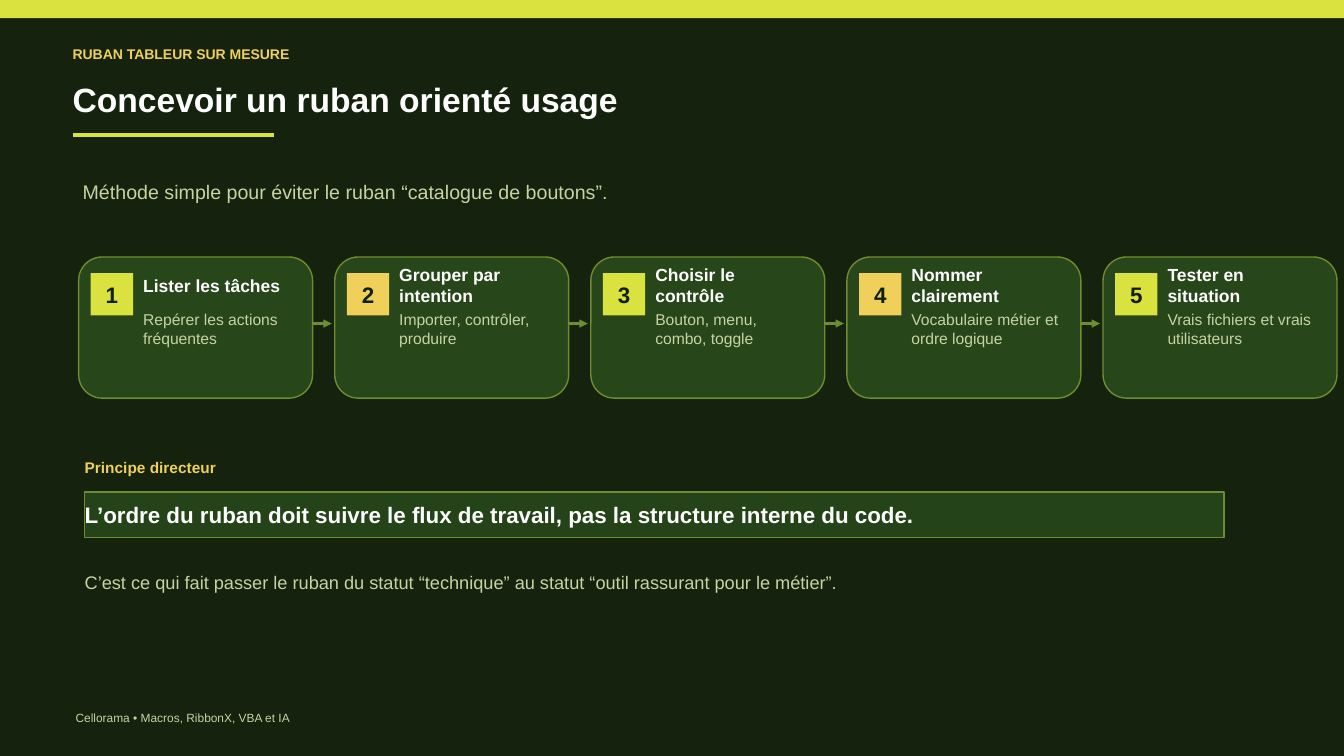
from dataclasses import dataclass

from lxml import etree
from pptx import Presentation
from pptx import util as u
from pptx.dml.color import RGBColor
from pptx.enum import shapes, text
from pptx.oxml import ns

PX = 9144
FONT = "Arial"
NIGHT = RGBColor(0x15, 0x22, 0x0D)
LIME = RGBColor(0xD9, 0xE2, 0x3F)
GOLD = RGBColor(0xF0, 0xD0, 0x5B)
WHITE = RGBColor(0xFF, 0xFF, 0xFF)
SAGE = RGBColor(0xC7, 0xD3, 0xA3)
OLIVE = RGBColor(0x6E, 0x8D, 0x2F)
FOREST = RGBColor(0x27, 0x46, 0x1A)
INK = RGBColor(0x10, 0x20, 0x0E)

CARD_LEFT, CARD_TOP, CARD_WIDTH, CARD_HEIGHT = 78, 255, 232, 140
CARD_PITCH = 254
ARROW_Y, ARROW_LENGTH = 321, 19


@dataclass(frozen=True)
class Area:
    left: int
    top: int
    width: int
    height: int

    def emu(self) -> list[int]:
        return [v * PX for v in (self.left, self.top, self.width, self.height)]


@dataclass(frozen=True)
class Style:
    size: float
    color: RGBColor
    bold: bool = False
    align: text.PP_ALIGN = text.PP_ALIGN.LEFT


@dataclass(frozen=True)
class Label:
    words: str
    area: Area
    style: Style


@dataclass(frozen=True)
class Step:
    heading: str
    detail: str


BADGE = Style(16, INK, True, text.PP_ALIGN.CENTER)
HEADING = Style(12.5, WHITE, True)
DETAIL = Style(11.2, SAGE)

TITLE = Label("Concevoir un ruban orienté usage", Area(72, 72, 1160, 52), Style(24, WHITE, True))
PRINCIPLE = Label(
    "L’ordre du ruban doit suivre le flux de travail, pas la structure interne du code.",
    Area(84, 488, 1130, 45), Style(16, WHITE, True))
LABELS = [
    Label("RUBAN TABLEUR SUR MESURE", Area(72, 42, 550, 22), Style(10, GOLD, True)),
    Label("Méthode simple pour éviter le ruban “catalogue de boutons”.",
          Area(82, 176, 600, 28), Style(14, SAGE)),
    Label("Principe directeur", Area(84, 452, 200, 24), Style(11, GOLD, True)),
    Label("C’est ce qui fait passer le ruban du statut “technique” au statut "
          "“outil rassurant pour le métier”.", Area(84, 560, 1100, 36), Style(13, SAGE)),
    Label("Cellorama • Macros, RibbonX, VBA et IA", Area(75, 703, 520, 18), Style(8.5, SAGE)),
]
STEPS = [
    Step("Lister les tâches", "Repérer les actions fréquentes"),
    Step("Grouper par intention", "Importer, contrôler, produire"),
    Step("Choisir le contrôle", "Bouton, menu, combo, toggle"),
    Step("Nommer clairement", "Vocabulaire métier et ordre logique"),
    Step("Tester en situation", "Vrais fichiers et vrais utilisateurs"),
]


def write(box, words: str, style: Style) -> None:
    frame = box.text_frame
    frame.word_wrap = True
    frame.auto_size = text.MSO_AUTO_SIZE.NONE
    frame.vertical_anchor = text.MSO_ANCHOR.MIDDLE
    frame.margin_left = frame.margin_top = frame.margin_right = frame.margin_bottom = 0
    para = frame.paragraphs[0]
    para.alignment = style.align
    span = para.add_run()
    span.text = words
    span.font.name = FONT
    span.font.size = u.Pt(style.size)
    span.font.bold = style.bold
    span.font.color.rgb = style.color


def add_label(page, label: Label) -> None:
    write(page.shapes.add_textbox(*label.area.emu()), label.words, label.style)


def add_title(page, label: Label) -> None:
    box = page.shapes.title
    box.left, box.top, box.width, box.height = label.area.emu()
    write(box, label.words, label.style)


def add_block(page, area: Area, fill: RGBColor, outline: RGBColor | None = None,
              kind=shapes.MSO_SHAPE.RECTANGLE):
    block = page.shapes.add_shape(kind, *area.emu())
    block.shadow.inherit = False
    block.fill.solid()
    block.fill.fore_color.rgb = fill
    if outline is None:
        block.line.fill.background()
    else:
        block.line.color.rgb = outline
        block.line.width = u.Pt(1)
    return block


def add_line(page, left: int, y: int, length: int, color: RGBColor, weight: float,
             arrow: bool = False) -> None:
    line = page.shapes.add_connector(
        shapes.MSO_CONNECTOR.STRAIGHT, left * PX, y * PX, (left + length) * PX, y * PX)
    line.line.color.rgb = color
    line.line.width = u.Pt(weight)
    if arrow:
        etree.SubElement(line.line._get_or_add_ln(), ns.qn("a:tailEnd"), type="triangle")
    etree.SubElement(line._element.spPr, ns.qn("a:effectLst"))


def add_step(page, index: int, step: Step) -> None:
    left = CARD_LEFT + index * CARD_PITCH
    badge = add_block(page, Area(left + 12, CARD_TOP + 16, 42, 42), GOLD if index % 2 else LIME)
    write(badge, str(index + 1), BADGE)
    add_label(page, Label(step.heading, Area(left + 64, CARD_TOP + 14, 150, 28), HEADING))
    add_label(page, Label(step.detail, Area(left + 64, CARD_TOP + 50, 150, 42), DETAIL))


def add_principle(page, label: Label) -> None:
    banner = add_block(page, label.area, FOREST, OLIVE)
    tint = banner._element.spPr.find(ns.qn("a:solidFill"))[0]
    etree.SubElement(tint, ns.qn("a:alpha"), val="92000")
    write(banner, label.words, label.style)


def main() -> None:
    deck = Presentation()
    deck.slide_width, deck.slide_height = 1333 * PX, 750 * PX
    page = deck.slides.add_slide(deck.slide_layouts.get_by_name("Title Only"))
    page.background.fill.solid()
    page.background.fill.fore_color.rgb = NIGHT

    add_block(page, Area(0, 0, 1333, 18), LIME)
    add_title(page, TITLE)
    add_line(page, 72, 134, 200, LIME, 2.4)

    lefts = [CARD_LEFT + index * CARD_PITCH for index in range(len(STEPS))]
    for left in lefts[:-1]:
        add_line(page, left + CARD_WIDTH, ARROW_Y, ARROW_LENGTH, OLIVE, 1.8, arrow=True)
    for left in lefts:
        add_block(page, Area(left, CARD_TOP, CARD_WIDTH, CARD_HEIGHT), FOREST, OLIVE,
                  shapes.MSO_SHAPE.ROUNDED_RECTANGLE)
    for index, step in enumerate(STEPS):
        add_step(page, index, step)

    add_principle(page, PRINCIPLE)
    for label in LABELS:
        add_label(page, label)
    deck.save("out.pptx")


if __name__ == "__main__":
    main()
